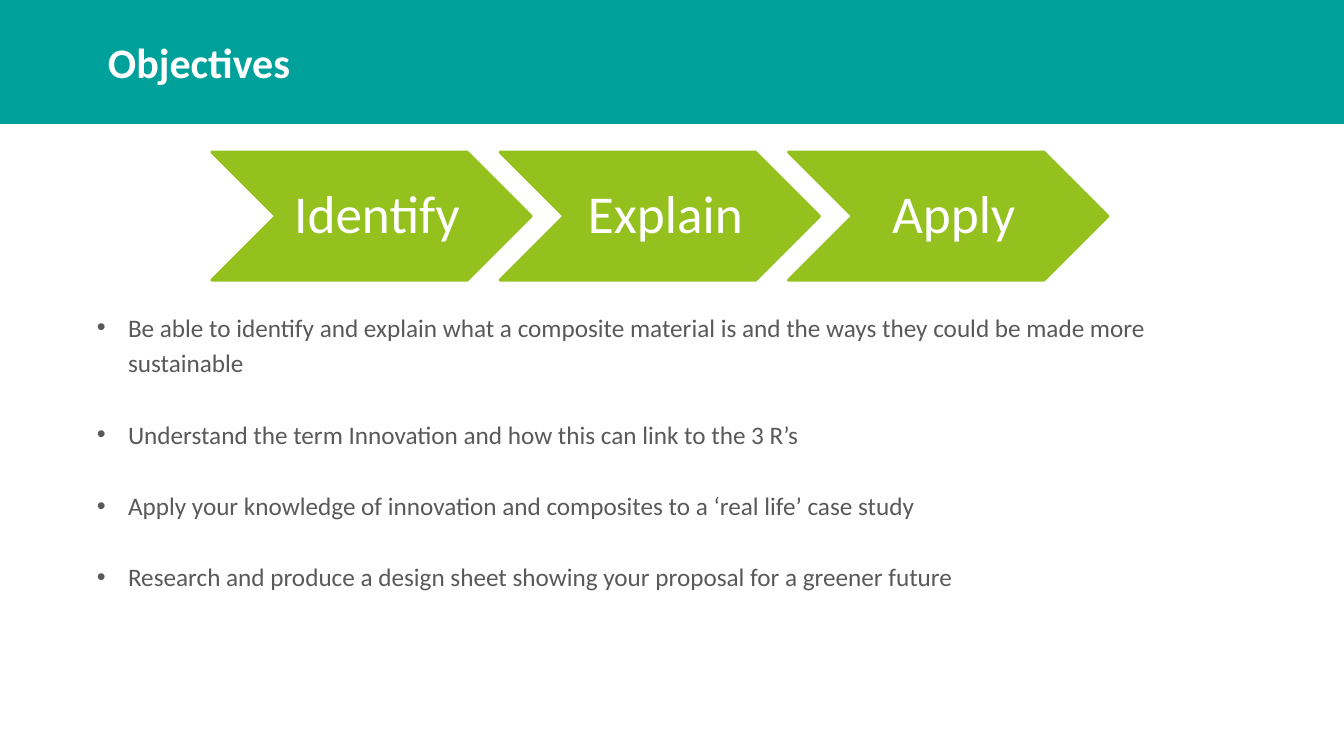
import pptx
import pptx.dml.color
import pptx.enum.shapes
import pptx.enum.text
import pptx.oxml
import pptx.oxml.ns
import pptx.util

Inches = pptx.util.Inches
Points = pptx.util.Pt
Shape = pptx.enum.shapes.MSO_SHAPE
Align = pptx.enum.text.PP_ALIGN
Anchor = pptx.enum.text.MSO_ANCHOR
AutoSize = pptx.enum.text.MSO_AUTO_SIZE

TEAL, GREEN, WHITE, GREY = "00A19A", "95C11F", "FFFFFF", "595959"
STEPS = ["Identify", "Explain", "Apply"]
OBJECTIVES = [
    "Be able to identify and explain what a composite material is and the ways "
    "they could be made more sustainable",
    "Understand the term Innovation and how this can link to the 3 R’s",
    "Apply your knowledge of innovation and composites to a ‘real life’ case study",
    "Research and produce a design sheet showing your proposal for a greener future",
]


def colour(value):
    return pptx.dml.color.RGBColor.from_string(value)


def format_with(target, values):
    for name, value in values.items():
        setattr(target, name, value)


class ObjectivesSlide:
    """Holds the text style and the slide that its methods draw on."""

    font_name = "Calibri"

    def __init__(self, presentation):
        self.slide = presentation.slides.add_slide(presentation.slide_layouts[1])
        self.shapes = self.slide.shapes

    def place(self, shape, left, top, width, height):
        format_with(shape, {"left": Inches(left), "top": Inches(top),
                            "width": Inches(width), "height": Inches(height)})

    def frame(self, shape, margins, **values):
        sides = ["margin_left", "margin_top", "margin_right", "margin_bottom"]
        format_with(shape.text_frame, dict(zip(sides, map(Inches, margins))))
        format_with(shape.text_frame, {"auto_size": AutoSize.NONE, **values})

    def add_text(self, paragraph, text, size, text_colour, bold=False, **values):
        run = paragraph.add_run()
        run.text = text
        format_with(run.font, {"name": self.font_name, "size": Points(size), "bold": bold})
        run.font.color.rgb = colour(text_colour)
        format_with(paragraph, {"space_before": Points(0), **values})

    def filled(self, preset, box, fill, line_width=0):
        shape = self.shapes.add_shape(preset, *map(Inches, box))
        shape.shadow.inherit = False
        shape.fill.solid()
        shape.fill.fore_color.rgb = colour(fill)
        if line_width:
            shape.line.color.rgb = colour(fill)
            shape.line.width = Points(line_width)
        else:
            shape.line.fill.background()
        return shape

    def band(self, box):
        band = self.filled(Shape.RECTANGLE, box, TEAL)
        self.shapes._spTree.insert(2, band._element)

    def title(self, text, box):
        title = self.shapes.title
        self.place(title, *box)
        self.frame(title, [0.1, 0.05, 0.1, 0.05],
                   word_wrap=True, vertical_anchor=Anchor.TOP)
        self.add_text(title.text_frame.paragraphs[0], text, 30, WHITE, bold=True,
                      alignment=Align.LEFT)

    def chevron(self, text, box):
        chevron = self.filled(Shape.CHEVRON, box, GREEN, 2)
        self.frame(chevron, [0.17, 0.06, 0.06, 0.06],
                   word_wrap=False, vertical_anchor=Anchor.MIDDLE)
        self.add_text(chevron.text_frame.paragraphs[0], text, 38, WHITE,
                      alignment=Align.CENTER, line_spacing=0.9)

    def bullet(self, paragraph):
        properties = paragraph._p.get_or_add_pPr()
        properties.set("marL", str(Inches(0.31)))
        properties.set("indent", str(-Inches(0.31)))
        namespace = pptx.oxml.ns.nsdecls("a")
        for element in ['buFont {} typeface="Arial"', 'buChar {} char="•"']:
            properties.append(pptx.oxml.parse_xml(f"<a:{element.format(namespace)}/>"))

    def bullets(self, items, box):
        body = self.slide.placeholders[1]
        self.place(body, *box)
        self.frame(body, [0, 0, 0, 0], word_wrap=True, vertical_anchor=Anchor.TOP)
        text_frame = body.text_frame
        for index, item in enumerate(items):
            paragraph = text_frame.add_paragraph() if index else text_frame.paragraphs[0]
            self.bullet(paragraph)
            self.add_text(paragraph, item, 18, GREY, alignment=Align.LEFT,
                          line_spacing=1.18, space_before=Points(25.5 if index else 0))


def main():
    presentation = pptx.Presentation()
    format_with(presentation, {"slide_width": Inches(13.33), "slide_height": Inches(7.5)})
    objectives = ObjectivesSlide(presentation)
    objectives.band([0, 0, 13.33, 1.23])
    objectives.title("Objectives", [0.97, 0.31, 6.04, 0.61])
    for index, step in enumerate(STEPS):
        objectives.chevron(step, [2.1 + 2.86 * index, 1.51, 3.17, 1.27])
    objectives.bullets(OBJECTIVES, [0.96, 3.04, 10.64, 2.9])
    presentation.save("out.pptx")


if __name__ == "__main__":
    main()
